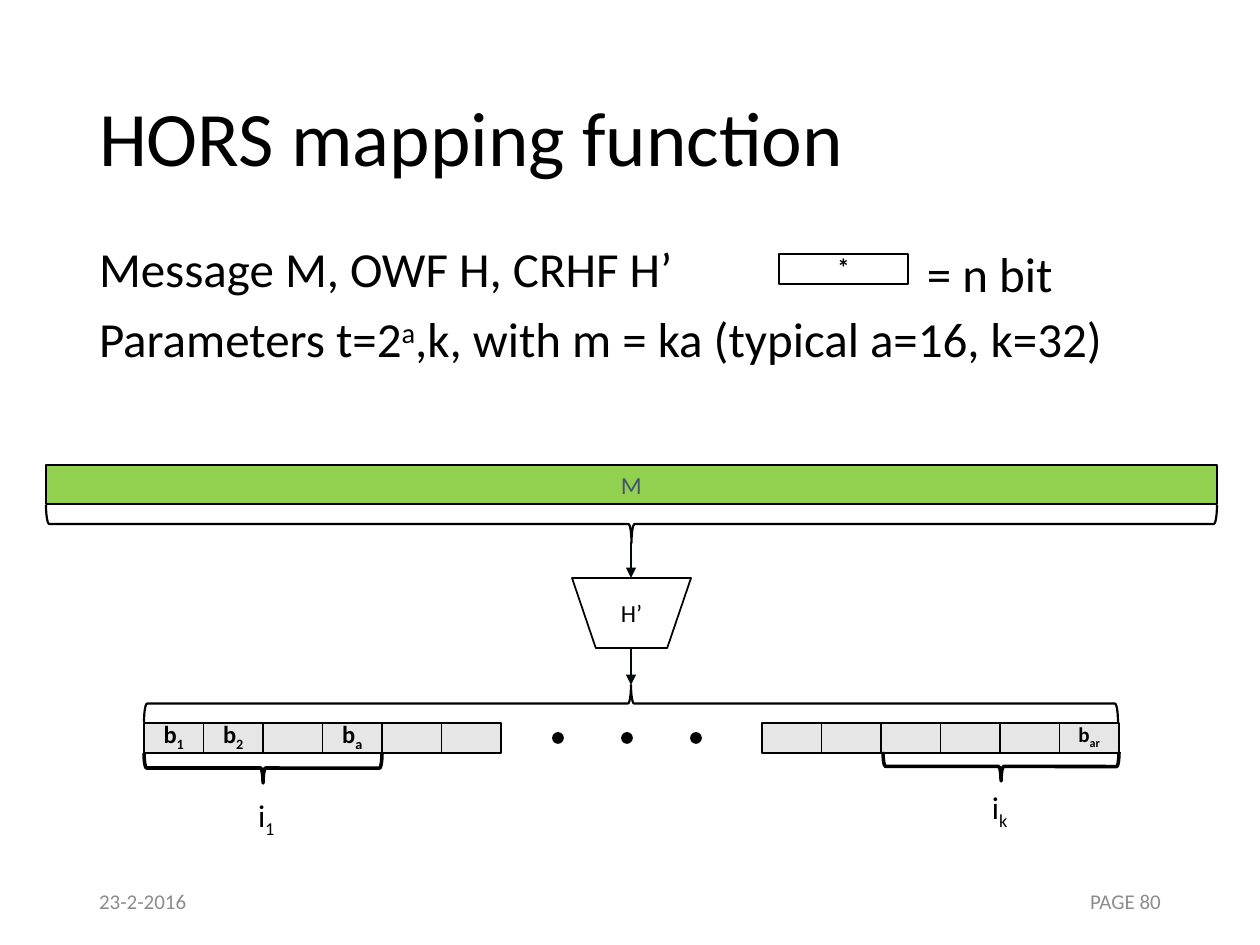
"""Build the slide on the HORS mapping function."""
import pptx
import pptx.dml.color
import pptx.enum.shapes
import pptx.enum.text
import pptx.oxml
import pptx.util

SHAPE = pptx.enum.shapes.MSO_SHAPE
ALIGN = pptx.enum.text.PP_ALIGN
ANCHOR = pptx.enum.text.MSO_ANCHOR
NS = 'xmlns:a="http://schemas.openxmlformats.org/drawingml/2006/main"'
SCALE = 914400 / 126
SUB, SUPER = -25000, 30000

COLORS = {
    "text": "000000", "line": "000000", "arrow": "00090C", "cell": "E7E6E6",
    "message": "92D050", "message_text": "44546A", "footer": "8C8C8C",
}

TITLE = [("HORS mapping function", 0)]
BODY = [
    [("Message M, OWF H, CRHF H’", 0)],
    [("Parameters t=2", 0), ("a", SUPER), (",k, with m = ka (typical a=16, k=32)", 0)],
]
CELL_ROWS = [
    (144, ["1", "2", "", "a", "", ""], 14),
    (762, ["", "", "", "", "", "ar"], 12),
]
ROW_TOP, ROW_WIDTH, ROW_HEIGHT = 723, 357, 30
DOT_LEFT, DOT_TOP, DOT_GAP, DOT_SIZE, DOT_COUNT = 553, 733, 69, 10, 3
BOXES = [
    ((46, 465, 1171, 39), SHAPE.RECTANGLE, "message", "M", {"size": 14, "color": "message_text"}),
    ((572, 578, 119, 70), SHAPE.FLOWCHART_MANUAL_OPERATION, None, "H’", {"size": 14}),
    ((779, 254, 129, 30), SHAPE.RECTANGLE, None, "*", {"size": 14, "bold": True}),
]
BRACES = [
    ((144, 753, 238, 30), 90, 2),
    ((883, 752, 236, 29), 90, 2),
    ((46, 505, 1171, 38), 90, 1.25),
    ((144, 685, 974, 37), 270, 1.25),
]
ARROWS = [(631, 542, 578), (631, 648, 685)]
LABELS = [
    ((914, 237, 200, 72), [("= n bit", 0)], {"size": 28}),
    ((245, 793, 59, 50), [("i", 0), ("1", SUB)], {"size": 18}),
    ((979, 785, 59, 50), [("i", 0), ("k", SUB)], {"size": 18}),
    ((86, 876, 284, 50), [("23-2-2016", 0)], {"size": 12, "color": "footer"}),
    ((890, 876, 284, 50), [("PAGE 80", 0)],
     {"size": 12, "color": "footer", "align": ALIGN.RIGHT}),
]


def px(n):
    return pptx.util.Emu(round(n * SCALE))


def rgb(name):
    return pptx.dml.color.RGBColor.from_string(COLORS[name])


def apply(target, values):
    for name, value in values.items():
        setattr(target, name, value)


def place(sp, box):
    apply(sp, dict(zip(("left", "top", "width", "height"), map(px, box))))


def write(p, runs, size, color="text", bold=False, align=ALIGN.LEFT):
    p.alignment = align
    for text, baseline in runs:
        r = p.add_run()
        r.text = text
        apply(r.font, {"name": "Calibri", "size": pptx.util.Pt(size), "bold": bold})
        r.font.color.rgb = rgb(color)
        if baseline:
            r._r.get_or_add_rPr().set("baseline", str(baseline))


def frame(sp, anchor, bottom=6):
    tf = sp.text_frame
    apply(tf, {
        "word_wrap": True, "auto_size": pptx.enum.text.MSO_AUTO_SIZE.NONE,
        "vertical_anchor": anchor, "margin_left": px(13), "margin_right": px(13),
        "margin_top": px(6), "margin_bottom": px(bottom),
    })
    return tf


def add_shape(s, kind, box, fill=None, weight=1):
    sp = s.shapes.add_shape(kind, *map(px, box))
    sp.shadow.inherit = False
    if fill:
        sp.fill.solid()
        sp.fill.fore_color.rgb = rgb(fill)
    else:
        sp.fill.background()
    sp.line.color.rgb = rgb("line")
    sp.line.width = pptx.util.Pt(weight)
    return sp


def add_box(s, kind, box, fill, runs, **style):
    sp = add_shape(s, kind, box, fill)
    if runs:
        bottom = 10 if style.get("bold") else 6
        write(frame(sp, ANCHOR.MIDDLE, bottom).paragraphs[0], runs, align=ALIGN.CENTER, **style)


def add_brace(s, box, rotation, weight):
    x, y, w, h = box
    turned = (x + (w - h) / 2, y + (h - w) / 2, h, w)
    add_shape(s, SHAPE.RIGHT_BRACE, turned, weight=weight).rotation = rotation


def add_arrow(s, x, top, bottom):
    line = s.shapes.add_connector(
        pptx.enum.shapes.MSO_CONNECTOR.STRAIGHT, px(x), px(top), px(x), px(bottom))
    line.line.color.rgb = rgb("arrow")
    line.line.width = pptx.util.Pt(1.25)
    line.line._get_or_add_ln().append(pptx.oxml.parse_xml(f'<a:tailEnd {NS} type="triangle"/>'))
    line._element.spPr.append(pptx.oxml.parse_xml(f"<a:effectLst {NS}/>"))


def fill_placeholders(s):
    title, body = s.placeholders
    place(title, (86, 50, 1086, 183))
    p = frame(title, ANCHOR.MIDDLE).paragraphs[0]
    p.line_spacing = 0.9
    write(p, TITLE, 44)

    place(body, (86, 239, 1101, 626))
    tf = frame(body, ANCHOR.TOP)
    for i, runs in enumerate(BODY):
        p = tf.add_paragraph() if i else tf.paragraphs[0]
        apply(p, {"line_spacing": 0.9, "space_before": pptx.util.Pt(10)})
        write(p, runs, 28)
        pPr = p._p.get_or_add_pPr()
        pPr.set("marL", "0")
        pPr.set("indent", "0")
        pPr.append(pptx.oxml.parse_xml(f"<a:buNone {NS}/>"))


def main():
    prs = pptx.Presentation()
    prs.slide_width, prs.slide_height = px(1260), px(945)
    s = prs.slides.add_slide(prs.slide_layouts[1])
    fill_placeholders(s)

    for left, indices, size in CELL_ROWS:
        width = ROW_WIDTH / len(indices)
        for i, index in enumerate(indices):
            runs = [("b", 0), (index, SUB)] if index else []
            add_box(s, SHAPE.RECTANGLE, (left + i * width, ROW_TOP, width, ROW_HEIGHT),
                    "cell", runs, size=size, bold=True)
    for i in range(DOT_COUNT):
        add_shape(s, SHAPE.OVAL, (DOT_LEFT + i * DOT_GAP, DOT_TOP, DOT_SIZE, DOT_SIZE), "line")
    for box, kind, fill, text, style in BOXES:
        add_box(s, kind, box, fill, [(text, 0)], **style)
    for brace in BRACES:
        add_brace(s, *brace)
    for arrow in ARROWS:
        add_arrow(s, *arrow)
    for box, runs, style in LABELS:
        sp = s.shapes.add_textbox(*map(px, box))
        write(frame(sp, ANCHOR.MIDDLE).paragraphs[0], runs, **style)

    prs.save("out.pptx")


if __name__ == "__main__":
    main()
